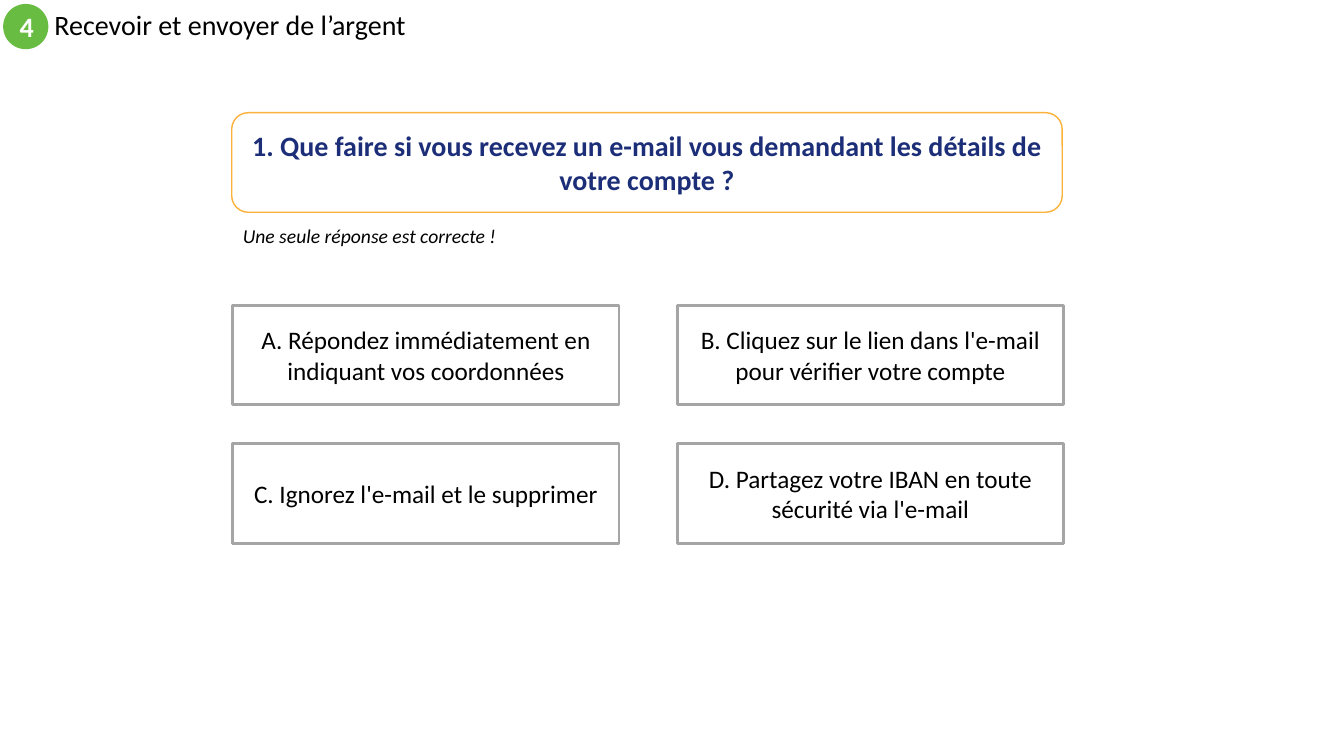
from pptx import Presentation
from pptx.dml.color import RGBColor
from pptx.enum.shapes import MSO_SHAPE
from pptx.enum.text import MSO_ANCHOR, MSO_AUTO_SIZE, PP_ALIGN
from pptx.util import Cm, Pt

OVAL = MSO_SHAPE.OVAL
RECTANGLE = MSO_SHAPE.RECTANGLE
ROUNDED = MSO_SHAPE.ROUNDED_RECTANGLE
MIDDLE, TOP = MSO_ANCHOR.MIDDLE, MSO_ANCHOR.TOP
CENTER, LEFT = PP_ALIGN.CENTER, PP_ALIGN.LEFT
FIT_SHAPE = MSO_AUTO_SIZE.SHAPE_TO_FIT_TEXT

COLORS = {
    "white": "FFFFFF",
    "black": "000000",
    "green": "68BC42",
    "orange": "FCB13A",
    "navy": "1C2E78",
    "gray": "A5A5A5",
}
ANSWERS = [
    "A. Répondez immédiatement en indiquant vos coordonnées",
    "B. Cliquez sur le lien dans l'e-mail pour vérifier votre compte",
    "C. Ignorez l'e-mail et le supprimer",
    "D. Partagez votre IBAN en toute sécurité via l'e-mail",
]


class QuizSlide:
    """Draw the elements of a quiz question on one slide in a shared style."""

    font_name = "Calibri"

    def __init__(self, presentation):
        self.slide = presentation.slides.add_slide(presentation.slide_layouts[6])

    def color(self, name):
        return RGBColor.from_string(COLORS[name])

    def set_text(self, shape, text, size, color="black", bold=False, italic=False,
                 align=CENTER, anchor=MIDDLE):
        frame = shape.text_frame
        frame.word_wrap = True
        frame.vertical_anchor = anchor
        paragraph = frame.paragraphs[0]
        paragraph.text = text
        paragraph.alignment = align
        font = paragraph.font
        font.name = self.font_name
        font.size = Pt(size)
        font.bold = bold
        font.italic = italic
        font.color.rgb = self.color(color)
        return paragraph

    def box(self, kind, left, top, width, height, fill="white", line=None, weight=1):
        shape = self.slide.shapes.add_shape(
            kind, Cm(left), Cm(top), Cm(width), Cm(height))
        shape.shadow.inherit = False
        shape.fill.solid()
        shape.fill.fore_color.rgb = self.color(fill)
        if line:
            shape.line.color.rgb = self.color(line)
            shape.line.width = Pt(weight)
        else:
            shape.line.fill.background()
        return shape

    def badge(self, number):
        shape = self.box(OVAL, 0.08, 0.1, 1.14, 1.14, fill="green")
        self.set_text(shape, number, 20, color="white", bold=True)

    def title(self, text):
        shape = self.slide.shapes.add_textbox(Cm(1.12), Cm(0.1), Cm(20.32), Cm(1.14))
        paragraph = self.set_text(shape, text, 20, align=LEFT)
        paragraph.line_spacing = 0.9

    def question(self, text):
        shape = self.box(ROUNDED, 5.84, 2.84, 20.93, 2.51, line="orange")
        self.set_text(shape, text, 20, color="navy", bold=True)

    def hint(self, text):
        shape = self.slide.shapes.add_textbox(Cm(5.87), Cm(5.51), Cm(8.08), Cm(0.86))
        self.set_text(shape, text, 14, italic=True, align=LEFT, anchor=TOP)
        shape.text_frame.auto_size = FIT_SHAPE

    def answers(self, texts):
        for index, text in enumerate(texts):
            row, column = divmod(index, 2)
            shape = self.box(RECTANGLE, 5.87 + 11.2 * column, 7.69 + 3.49 * row,
                             9.73, 2.51, line="gray", weight=2)
            self.set_text(shape, text, 18)


def main():
    presentation = Presentation()
    presentation.slide_width = Cm(33.87)
    presentation.slide_height = Cm(19.05)
    quiz = QuizSlide(presentation)
    quiz.badge("4")
    quiz.title("Recevoir et envoyer de l’argent")
    quiz.question("1. Que faire si vous recevez un e-mail vous demandant "
                  "les détails de votre compte ?")
    quiz.hint("Une seule réponse est correcte !")
    quiz.answers(ANSWERS)
    presentation.save("out.pptx")


if __name__ == "__main__":
    main()
